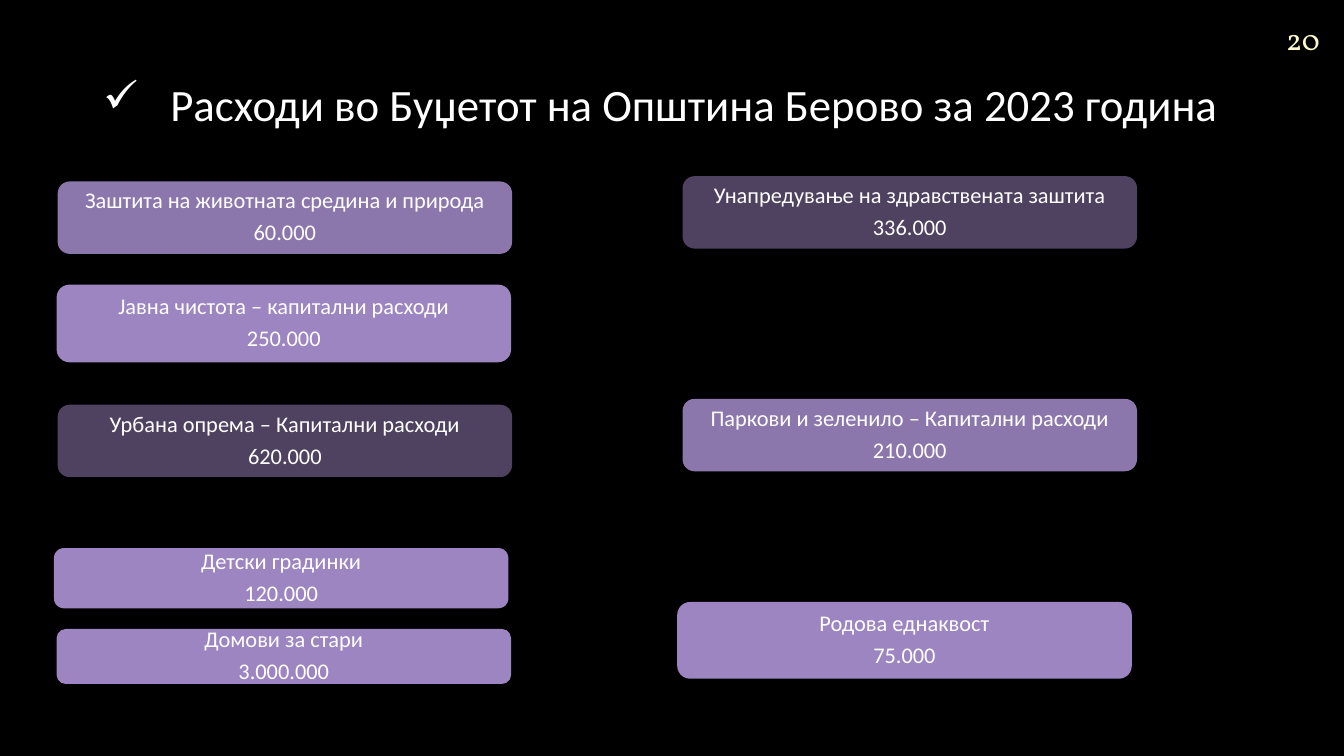
"""Build the slide on the 2023 expenses of the Berovo municipality budget."""
from typing import NamedTuple

from lxml.etree import SubElement
from pptx import Presentation
from pptx.dml.color import RGBColor
from pptx.enum.shapes import MSO_SHAPE as Shape
from pptx.enum.text import MSO_ANCHOR as Anchor, PP_ALIGN as Align
from pptx.oxml.ns import qn
from pptx.util import Cm, Pt

BLACK = RGBColor(0x00, 0x00, 0x00)
WHITE = RGBColor(0xFF, 0xFF, 0xFF)
CREAM = RGBColor(0xFE, 0xFA, 0xC9)
PURPLE = RGBColor(0x9C, 0x85, 0xC0)
CARD_WIDTH = 8.59


class Expense(NamedTuple):
    """An expense card, with lengths in centimetres and opacity in percent."""
    name: str
    amount: str
    left: float
    top: float
    height: float
    opacity: int = 100


class Label(NamedTuple):
    """A line of text in a box, with lengths in centimetres."""
    text: str
    left: float
    top: float
    width: float
    height: float
    anchor: Anchor
    align: Align
    font: str
    size: int
    color: RGBColor


EXPENSES = [
    Expense("Заштита на животната средина и природа", "60.000", 1.09, 3.43, 1.37, 90),
    Expense("Унапредување на здравствената заштита", "336.000", 12.9, 3.33, 1.37, 50),
    Expense("Јавна чистота – капитални расходи", "250.000", 1.07, 5.38, 1.47),
    Expense("Паркови и зеленило – Капитални расходи", "210.000", 12.9, 7.54, 1.37, 90),
    Expense("Урбана опрема – Капитални расходи", "620.000", 1.09, 7.65, 1.37, 50),
    Expense("Детски градинки", "120.000", 1.02, 10.36, 1.14),
    Expense("Домови за стари", "3.000.000", 1.07, 11.89, 1.04),
    Expense("Родова еднаквост", "75.000", 12.8, 11.38, 1.45),
]
PAGE_NUMBER = Label("20", 23.85, -0.03, 1.55, 1.52, Anchor.MIDDLE, Align.CENTER,
                    "Vollkorn", 16, CREAM)
TITLE = Label("Расходи во Буџетот на Општина Берово за 2023 година", 1.7, 0.74, 23.27, 1.98,
              Anchor.BOTTOM, Align.LEFT, "Calibri", 24, WHITE)


def set_margins(frame, side: float, end: float) -> None:
    """Set the side and the top and bottom margins of a text frame."""
    frame.margin_left = frame.margin_right = Cm(side)
    frame.margin_top = frame.margin_bottom = Cm(end)


def set_font(para, name: str, size: int, color: RGBColor) -> None:
    """Set the font of a whole paragraph."""
    para.font.name = name
    para.font.size = Pt(size)
    para.font.color.rgb = color


def add_label(page, label: Label):
    """Add a one-line text box and return its paragraph."""
    box = page.shapes.add_textbox(Cm(label.left), Cm(label.top), Cm(label.width), Cm(label.height))
    frame = box.text_frame
    frame.word_wrap = True
    frame.vertical_anchor = label.anchor
    set_margins(frame, 0.25, 0.25)
    para = frame.paragraphs[0]
    para.text = label.text
    para.alignment = label.align
    set_font(para, label.font, label.size, label.color)
    return para


def add_bullet(para, mark: str, indent: int) -> None:
    """Give a paragraph a white bullet with a hanging indent."""
    properties = para._p.get_or_add_pPr()
    properties.set("marL", str(indent))
    properties.set("indent", str(-indent))
    bullet = properties.makeelement(qn("a:buChar"), {"char": mark})
    color = properties.makeelement(qn("a:buClr"), {})
    SubElement(color, qn("a:srgbClr"), val=str(WHITE))
    properties.insert(0, color)
    properties.insert(1, bullet)


def add_expense(page, expense: Expense) -> None:
    """Add a rounded card with the name and amount of an expense."""
    card = page.shapes.add_shape(Shape.ROUNDED_RECTANGLE, Cm(expense.left), Cm(expense.top),
                                 Cm(CARD_WIDTH), Cm(expense.height))
    card.shadow.inherit = False
    card.line.fill.background()
    card.fill.solid()
    card.fill.fore_color.rgb = PURPLE
    if expense.opacity < 100:
        color = card._element.spPr.find(qn("a:solidFill"))[0]
        SubElement(color, qn("a:alpha"), val=str(expense.opacity * 1000))
    frame = card.text_frame
    frame.word_wrap = True
    frame.vertical_anchor = Anchor.MIDDLE
    set_margins(frame, 0.13, 0.08)
    frame.text = f"{expense.name}\n{expense.amount}"
    for para in frame.paragraphs:
        para.alignment = Align.CENTER
        para.line_spacing = 0.9
        para.space_after = Pt(4.2)
        set_font(para, "Calibri", 12, WHITE)


def main() -> None:
    """Build and save the deck."""
    deck = Presentation()
    deck.slide_width, deck.slide_height = Cm(25.4), Cm(14.29)
    page = deck.slides.add_slide(deck.slide_layouts[6])
    page.background.fill.solid()
    page.background.fill.fore_color.rgb = BLACK
    add_label(page, PAGE_NUMBER)
    add_bullet(add_label(page, TITLE), "✓", Cm(1.27))
    for expense in EXPENSES:
        add_expense(page, expense)
    deck.save("out.pptx")


if __name__ == "__main__":
    main()
